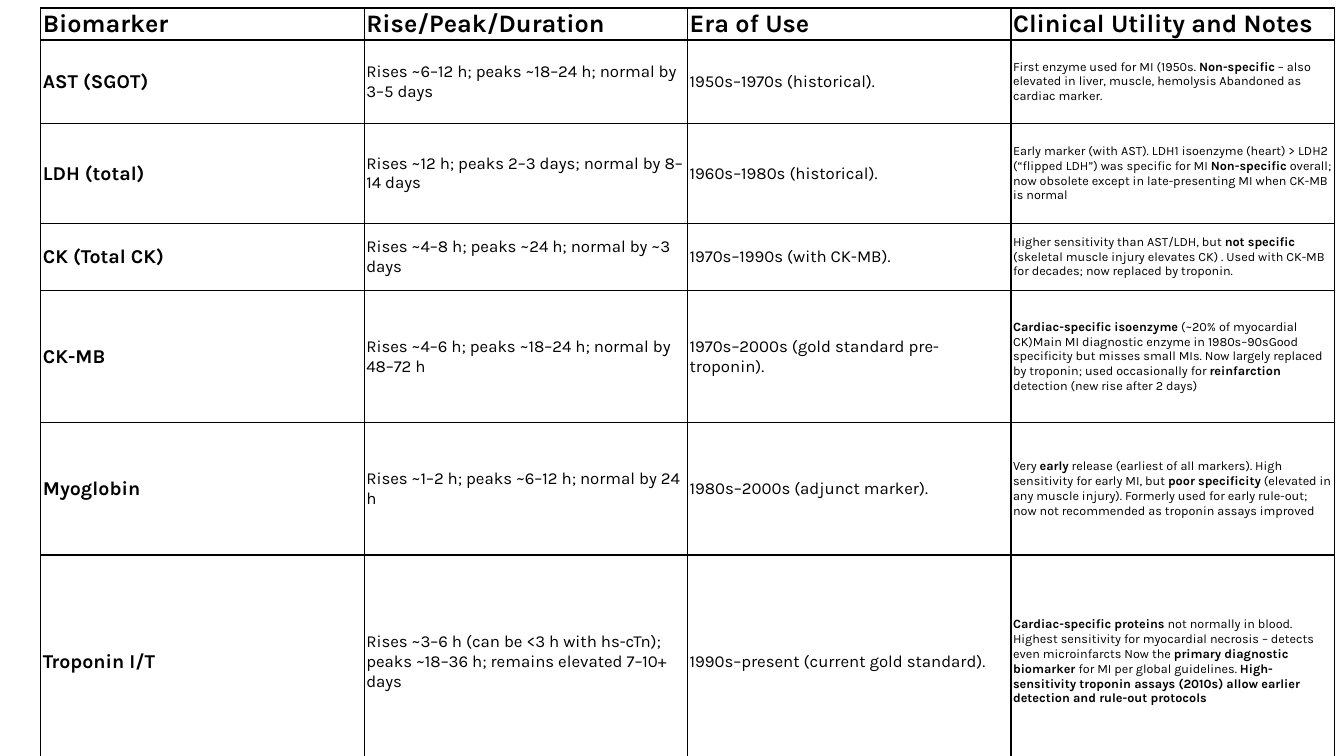
from lxml import etree
from pptx import Presentation
from pptx.dml.color import RGBColor
from pptx.enum.text import MSO_ANCHOR
from pptx.oxml.ns import qn
from pptx.util import Cm, Pt

MIDDLE = MSO_ANCHOR.MIDDLE
BLACK = RGBColor(0x00, 0x00, 0x00)
FONT = "Karla"

# Table geometry in centimetres
LEFT, TOP = 1.03, 0.2
COLUMN_WIDTH = 8.15
ROW_HEIGHTS = [0.8, 2.11, 2.51, 1.7, 3.33, 3.33, 5.38]

# Text sizes in points, one per column for the body
HEADER_SIZE = 18
BODY_SIZES = [14, 12, 12, 9]

# Double asterisks enclose bold passages
HEADERS = ["Biomarker", "Rise/Peak/Duration", "Era of Use", "Clinical Utility and Notes"]
BIOMARKERS = [
    ["AST (SGOT)",
     "Rises ~6–12 h; peaks ~18–24 h; normal by 3–5 days",
     "1950s–1970s (historical).",
     "First enzyme used for MI (1950s. **Non-specific** – also elevated in liver, "
     "muscle, hemolysis Abandoned as cardiac marker."],
    ["LDH (total)",
     "Rises ~12 h; peaks 2–3 days; normal by 8–14 days",
     "1960s–1980s (historical).",
     "Early marker (with AST). LDH1 isoenzyme (heart) > LDH2 (“flipped LDH”) was "
     "specific for MI **Non-specific** overall; now obsolete except in "
     "late-presenting MI when CK-MB is normal"],
    ["CK (Total CK)",
     "Rises ~4–8 h; peaks ~24 h; normal by ~3 days",
     "1970s–1990s (with CK-MB).",
     "Higher sensitivity than AST/LDH, but **not specific** (skeletal muscle injury "
     "elevates CK) . Used with CK-MB for decades; now replaced by troponin."],
    ["CK-MB",
     "Rises ~4–6 h; peaks ~18–24 h; normal by 48–72 h",
     "1970s–2000s (gold standard pre-troponin).",
     "**Cardiac-specific isoenzyme** (~20% of myocardial CK)Main MI diagnostic "
     "enzyme in 1980s–90sGood specificity but misses small MIs. Now largely "
     "replaced by troponin; used occasionally for **reinfarction **detection "
     "(new rise after 2 days)"],
    ["Myoglobin",
     "Rises ~1–2 h; peaks ~6–12 h; normal by 24 h",
     "1980s–2000s (adjunct marker).",
     "Very **early** release (earliest of all markers). High sensitivity for early "
     "MI, but **poor specificity** (elevated in any muscle injury). Formerly used "
     "for early rule-out; now not recommended as troponin assays improved"],
    ["Troponin I/T",
     "Rises ~3–6 h (can be <3 h with hs-cTn); peaks ~18–36 h; remains elevated "
     "7–10+ days",
     "1990s–present (current gold standard).",
     "**Cardiac-specific proteins **not normally in blood. Highest sensitivity for "
     "myocardial necrosis – detects even microinfarcts Now the **primary diagnostic "
     "biomarker **for MI per global guidelines. **High-sensitivity troponin assays "
     "(2010s) allow earlier detection and rule-out protocols**"],
]


def add_borders(cell):
    properties = cell._tc.get_or_add_tcPr()
    for side in ("a:lnL", "a:lnR", "a:lnT", "a:lnB"):
        line = etree.SubElement(properties, qn(side), w=str(Pt(1)))
        fill = etree.SubElement(line, qn("a:solidFill"))
        etree.SubElement(fill, qn("a:srgbClr"), val=str(BLACK))


def add_span(para, text, size, bold):
    span = para.add_run()
    span.text = text
    span.font.name = FONT
    span.font.size = Pt(size)
    span.font.bold = bold
    span.font.color.rgb = BLACK


def fill_cell(cell, text, size, bold):
    add_borders(cell)
    cell.fill.background()
    cell.vertical_anchor = MIDDLE
    cell.margin_left = cell.margin_right = Cm(0.05)
    cell.margin_top = cell.margin_bottom = Cm(0.03)
    para = cell.text_frame.paragraphs[0]
    for index, part in enumerate(text.split("**")):
        if part:
            add_span(para, part, size, bold or index % 2 == 1)


def add_biomarker_table(page):
    rows = [HEADERS] + BIOMARKERS
    frame = page.shapes.add_table(
        len(rows), len(HEADERS), Cm(LEFT), Cm(TOP),
        Cm(COLUMN_WIDTH * len(HEADERS)), Cm(sum(ROW_HEIGHTS)))
    table = frame.table
    table.first_row = False
    table.horz_banding = False
    for row, height in zip(table.rows, ROW_HEIGHTS):
        row.height = Cm(height)
    for row_index, texts in enumerate(rows):
        is_header = row_index == 0
        for column_index, text in enumerate(texts):
            size = HEADER_SIZE if is_header else BODY_SIZES[column_index]
            bold = is_header or column_index == 0
            fill_cell(table.cell(row_index, column_index), text, size, bold)


def main():
    deck = Presentation()
    deck.slide_width = Cm(33.87)
    deck.slide_height = Cm(19.05)
    page = deck.slides.add_slide(deck.slide_layouts[6])
    add_biomarker_table(page)
    deck.save("out.pptx")


if __name__ == "__main__":
    main()
